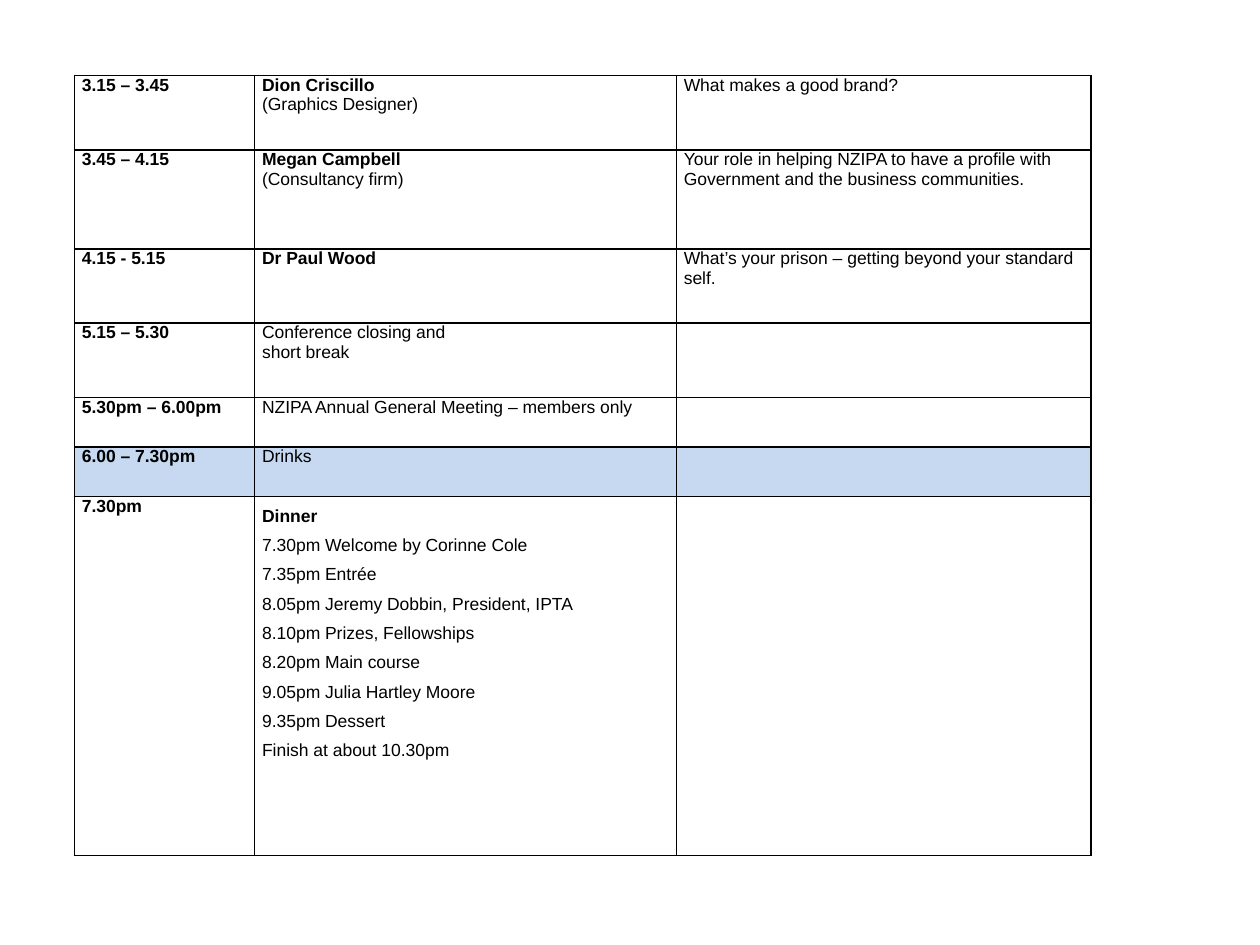
import dataclasses

import lxml.etree
import pptx
import pptx.dml.color
import pptx.oxml.ns
import pptx.util

Pt = pptx.util.Pt
Color = pptx.dml.color.RGBColor


@dataclasses.dataclass(frozen=True)
class Theme:
    """Colours, type and line sizes of the programme."""
    ink: str = "000000"
    paper: str = "FFFFFF"
    highlight: str = "C6D9F1"
    font: str = "Arial"
    size: float = 10
    border: float = 1
    inset: float = 4.32


@dataclasses.dataclass(frozen=True)
class Session:
    """One row: time, optional bold heading, detail lines and topic."""
    height: float
    time: str
    heading: str = ""
    details: tuple = ()
    topic: str = ""
    fill: str = Theme.paper
    spacing: float = 1


THEME = Theme()
COLUMN_WIDTHS = (103, 241, 237)
SESSIONS = (
    Session(42.5, "3.15 – 3.45", "Dion Criscillo", ("(Graphics Designer)",),
            "What makes a good brand?"),
    Session(56.5, "3.45 – 4.15", "Megan Campbell", ("(Consultancy firm)",),
            "Your role in helping NZIPA to have a profile with "
            "Government and the business communities."),
    Session(42.5, "4.15 - 5.15", "Dr Paul Wood",
            topic="What’s your prison – getting beyond your standard self."),
    Session(42.5, "5.15 – 5.30", details=("Conference closing and", "short break")),
    Session(28.3, "5.30pm – 6.00pm",
            details=("NZIPA Annual General Meeting – members only",)),
    Session(28.3, "6.00 – 7.30pm", details=("Drinks",), fill=THEME.highlight),
    Session(205.2, "7.30pm", "Dinner", (
        "7.30pm Welcome by Corinne Cole",
        "7.35pm Entrée",
        "8.05pm Jeremy Dobbin, President, IPTA",
        "8.10pm Prizes, Fellowships",
        "8.20pm Main course",
        "9.05pm Julia Hartley Moore",
        "9.35pm Dessert",
        "Finish at about 10.30pm",
    ), spacing=1.5),
)


def add_borders(cell):
    """Draw a solid line on all four sides of a cell."""
    properties = cell._tc.get_or_add_tcPr()
    qualify = pptx.oxml.ns.qn
    for side in ("lnL", "lnR", "lnT", "lnB"):
        line = lxml.etree.SubElement(
            properties, qualify(f"a:{side}"), w=str(int(Pt(THEME.border))))
        fill = lxml.etree.SubElement(line, qualify("a:solidFill"))
        lxml.etree.SubElement(fill, qualify("a:srgbClr"), val=THEME.ink)


def fill_cell(cell, lines, fill, spacing=1):
    """Style a cell and write its (text, bold) lines as paragraphs."""
    add_borders(cell)
    cell.fill.solid()
    cell.fill.fore_color.rgb = Color.from_string(fill)
    cell.margin_left = cell.margin_right = Pt(THEME.inset)
    cell.margin_top = cell.margin_bottom = Pt(0)
    frame = cell.text_frame
    for index, (text, bold) in enumerate(lines):
        paragraph = frame.add_paragraph() if index else frame.paragraphs[0]
        paragraph.text = text
        paragraph.line_spacing = spacing
        paragraph.font.name = THEME.font
        paragraph.font.size = Pt(THEME.size)
        paragraph.font.bold = bold
        paragraph.font.color.rgb = Color.from_string(THEME.ink)


def add_programme(slide, left, top, sessions):
    """Place the programme table with its top left corner at the given point."""
    width, height = sum(COLUMN_WIDTHS), sum(session.height for session in sessions)
    table = slide.shapes.add_table(
        len(sessions), len(COLUMN_WIDTHS),
        Pt(left), Pt(top), Pt(width), Pt(height)).table
    table.first_row = table.horz_banding = False
    for column, column_width in zip(table.columns, COLUMN_WIDTHS):
        column.width = Pt(column_width)
    for row, session in zip(table.rows, sessions):
        row.height = Pt(session.height)
        heading = [(session.heading, True)] if session.heading else []
        event = heading + [(detail, False) for detail in session.details]
        time_cell, event_cell, topic_cell = row.cells
        fill_cell(time_cell, [(session.time, True)], session.fill)
        fill_cell(event_cell, event, session.fill, session.spacing)
        fill_cell(topic_cell, [(session.topic, False)], session.fill)


def main():
    """Build and save the one-slide programme."""
    presentation = pptx.Presentation()
    presentation.slide_width, presentation.slide_height = Pt(720), Pt(540)
    slide = presentation.slides.add_slide(presentation.slide_layouts[6])
    add_programme(slide, 42.5, 43.2, SESSIONS)
    presentation.save("out.pptx")


if __name__ == "__main__":
    main()
